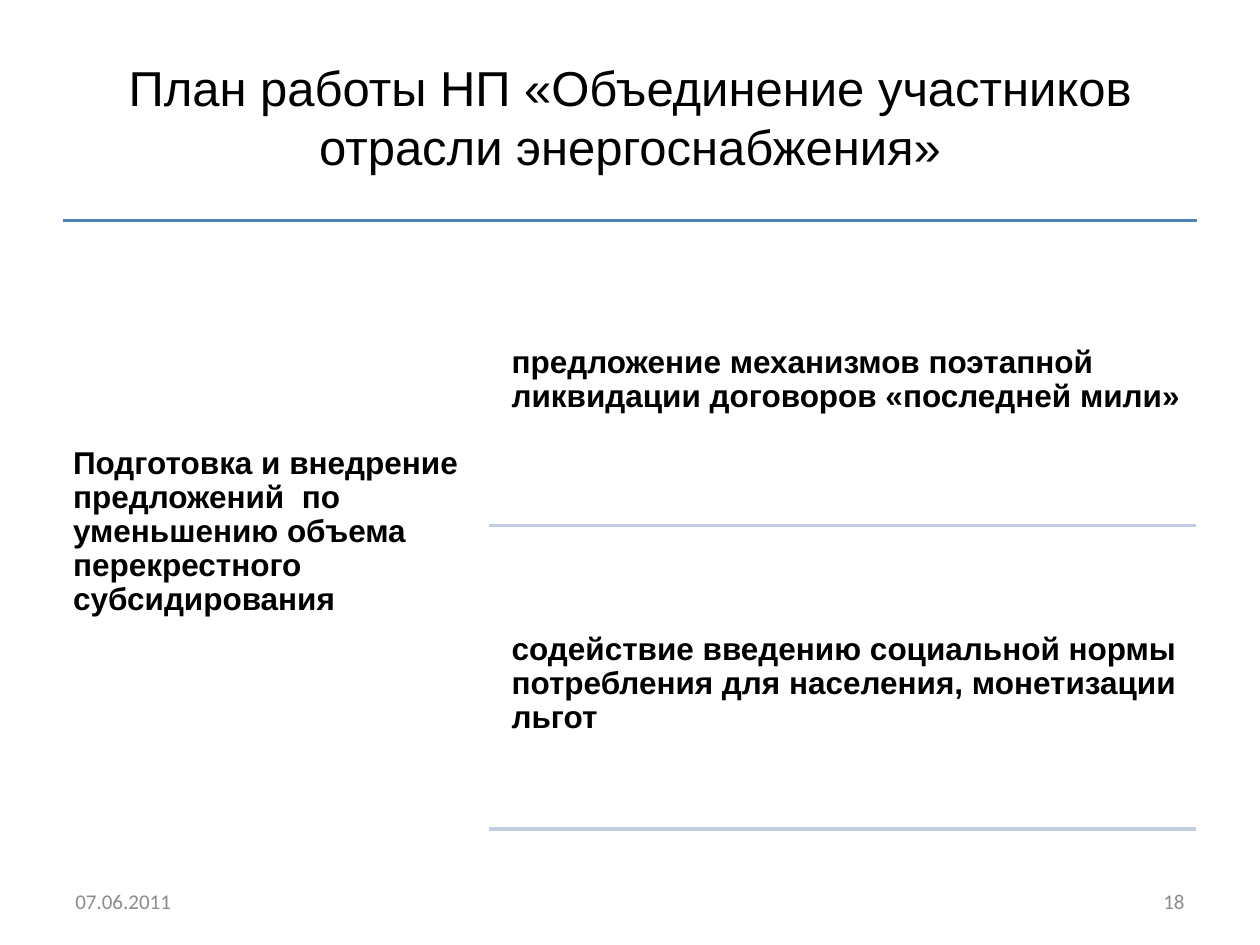
import pptx
import pptx.dml.color
import pptx.enum.shapes
import pptx.enum.text
import pptx.oxml.ns
import pptx.util
from lxml import etree

RGBColor = pptx.dml.color.RGBColor
ALIGN = pptx.enum.text.PP_ALIGN

BLACK = RGBColor(0x00, 0x00, 0x00)
GRAY = RGBColor(0x8C, 0x8C, 0x8C)
BLUE = RGBColor(0x4F, 0x81, 0xBD)
PALE_BLUE = RGBColor(0xC2, 0xCD, 0xE1)

EMU_PER_PX = 9144


def px(n):
    return pptx.util.Emu(n * EMU_PER_PX)


def write(tf, text, size=18, font="Arial", color=BLACK, bold=False,
          align=ALIGN.LEFT, spacing=1.0):
    p = tf.paragraphs[0]
    p.alignment = align
    p.line_spacing = spacing
    r = p.add_run()
    r.text = text
    r.font.size = pptx.util.Pt(size)
    r.font.name = font
    r.font.bold = bold
    r.font.color.rgb = color


class Deck:
    body = dict(bold=True, spacing=0.9)
    footer = dict(size=12, font="Calibri", color=GRAY)

    def __init__(self, width, height):
        self.prs = pptx.Presentation()
        self.prs.slide_width = px(width)
        self.prs.slide_height = px(height)
        self.s = self.prs.slides.add_slide(self.prs.slide_layouts[6])

    def text(self, text, x, y, w, h, inset_x=10, inset_y=5, **style):
        sp = self.s.shapes.add_textbox(px(x), px(y), px(w), px(h))
        tf = sp.text_frame
        tf.word_wrap = True
        tf.vertical_anchor = pptx.enum.text.MSO_ANCHOR.MIDDLE
        tf.margin_left = tf.margin_right = px(inset_x)
        tf.margin_top = tf.margin_bottom = px(inset_y)
        write(tf, text, **style)

    def body_text(self, text, x, y, w, h):
        self.text(text, x, y, w, h, inset_x=7, inset_y=7, **self.body)

    def rule(self, x1, x2, y, color):
        cn = self.s.shapes.add_connector(
            pptx.enum.shapes.MSO_CONNECTOR.STRAIGHT, px(x1), px(y), px(x2), px(y))
        cn.line.color.rgb = color
        cn.line.width = pptx.util.Pt(2)
        sp_pr = cn._element.spPr
        etree.SubElement(sp_pr, pptx.oxml.ns.qn("a:effectLst"))


def main():
    deck = Deck(1000, 750)
    deck.text("План работы НП «Объединение участников отрасли энергоснабжения»",
              50, 30, 900, 125, size=28, align=ALIGN.CENTER)

    top = 175
    deck.rule(50, 950, top, BLUE)
    deck.body_text("Подготовка и внедрение предложений  по уменьшению объема "
                   "перекрестного субсидирования", 51, top, 338, 495)

    measures = [
        "предложение механизмов поэтапной ликвидации договоров «последней мили»",
        "содействие введению социальной нормы потребления для населения, "
        "монетизации льгот",
    ]
    gap, row_h = 12, 230
    for i, measure in enumerate(measures):
        y = top + gap + i * (row_h + gap - 1)
        deck.body_text(measure, 399, y, 551, row_h)
        deck.rule(388, 949, y + row_h, PALE_BLUE)

    deck.text("07.06.2011", 50, 695, 233, 40, **deck.footer)
    deck.text("18", 717, 695, 233, 40, align=ALIGN.RIGHT, **deck.footer)
    deck.prs.save("out.pptx")


if __name__ == "__main__":
    main()
